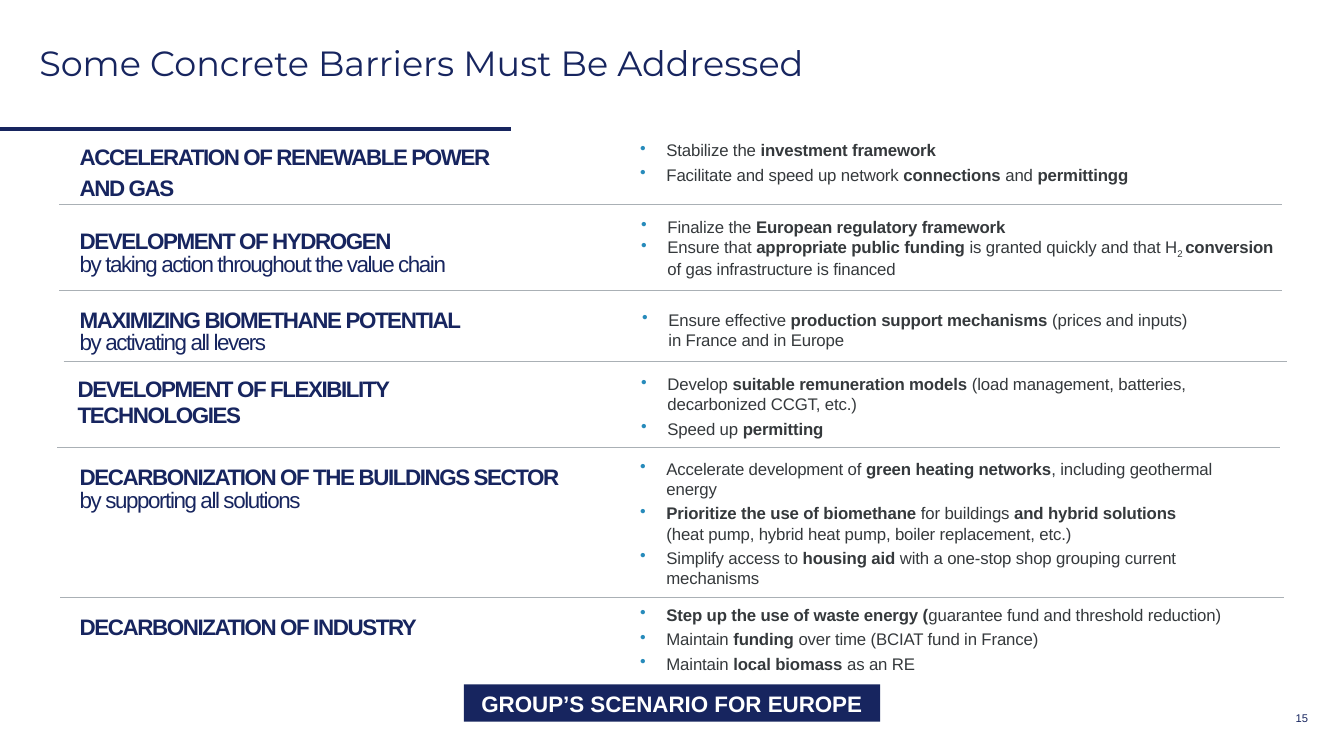
from lxml.etree import SubElement
from pptx import Presentation
from pptx.dml.color import RGBColor
from pptx.enum.shapes import MSO_CONNECTOR, MSO_SHAPE
from pptx.enum.text import MSO_ANCHOR, PP_ALIGN
from pptx.oxml.ns import qn
from pptx.util import Inches, Pt

NAVY, GREY, RULE, BLUE, WHITE = "17255F", "35393C", "AAB0B5", "278BBB", "FFFFFF"

TOPICS = [
    (0.78, 1.39, [("*ACCELERATION OF RENEWABLE POWER*", 21.6), ("*AND GAS*", 21.6)],
     6.24, 1.39, 3,
     ["Stabilize the *investment framework*",
      "Facilitate and speed up network *connections* and *permittingg*"]),
    (0.78, 2.21, [("*DEVELOPMENT OF HYDROGEN*", 22.3),
                  ("by taking action throughout the value chain", 16.3)],
     6.25, 2.15, 0,
     ["Finalize the *European regulatory framework*",
      "Ensure that *appropriate public funding* is granted quickly and that H_2 _*conversion*"
      "|of gas infrastructure is financed"]),
    (0.78, 2.99, [("*MAXIMIZING BIOMETHANE POTENTIAL*", 22.3),
                  ("by activating all levers", 16.3)],
     6.26, 3.07, 3,
     ["Ensure effective *production support mechanisms* (prices and inputs)"
      "|in France and in Europe"]),
    (0.76, 3.72, [("*DEVELOPMENT OF FLEXIBILITY*", 19), ("*TECHNOLOGIES*", 19)],
     6.25, 3.71, 3,
     ["Develop *suitable remuneration models* (load management, batteries,"
      "|decarbonized CCGT, etc.)",
      "Speed up *permitting*"]),
    (0.78, 4.55, [("*DECARBONIZATION OF THE BUILDINGS SECTOR*", 22.3),
                  ("by supporting all solutions", 16.3)],
     6.24, 4.55, 3,
     ["Accelerate development of *green heating networks*, including geothermal|energy",
      "*Prioritize the use of biomethane* for buildings *and hybrid solutions*"
      "|(heat pump, hybrid heat pump, boiler replacement, etc.)",
      "Simplify access to *housing aid* with a one-stop shop grouping current|mechanisms"]),
    (0.78, 6.09, [("*DECARBONIZATION OF INDUSTRY*", 18.4)],
     6.24, 6, 3,
     ["*Step up the use of waste energy (*guarantee fund and threshold reduction)",
      "Maintain *funding* over time (BCIAT fund in France)",
      "Maintain *local biomass* as an RE"]),
]
RULES = [(0.59, 2.03), (0.59, 2.88), (0.63, 3.58), (0.57, 4.44), (0.6, 5.92)]


def color(code):
    return RGBColor.from_string(code)


def style(para, size, code, face="Arial"):
    para.font.size = Pt(size)
    para.font.name = face
    para.font.color.rgb = color(code)


def write(para, text, track):
    for row, line in enumerate(text.split("|")):
        if row:
            para.add_line_break()
        for turn, part in enumerate(line.split("*")):
            for step, bit in enumerate(part.split("_")):
                if not bit:
                    continue
                run = para.add_run()
                run.text = bit
                props = run._r.get_or_add_rPr()
                props.set("spc", str(track))
                if turn % 2:
                    run.font.bold = True
                if step % 2:
                    props.set("baseline", "-20000")


def add_box(slide, left, top, width, height):
    box = slide.shapes.add_textbox(Inches(left), Inches(top), Inches(width), Inches(height))
    frame = box.text_frame
    frame.word_wrap = True
    frame.margin_left = frame.margin_right = frame.margin_top = frame.margin_bottom = 0
    return frame


def add_para(frame, index):
    return frame.add_paragraph() if index else frame.paragraphs[0]


def add_bullet(para):
    props = para._p.get_or_add_pPr()
    props.set("marL", str(Inches(0.37)))
    props.set("indent", str(-Inches(0.26)))
    tint = SubElement(props, qn("a:buClr"))
    SubElement(tint, qn("a:srgbClr")).set("val", BLUE)
    SubElement(props, qn("a:buChar")).set("char", "•")


def add_heading(slide, left, top, lines):
    frame = add_box(slide, left + 0.01, top, 5.3, 0.6)
    for index, (text, pitch) in enumerate(lines):
        para = add_para(frame, index)
        para.line_spacing = Pt(pitch)
        style(para, 16, NAVY)
        write(para, text, -100)


def add_list(slide, left, top, gap, items):
    frame = add_box(slide, left, top, 6.6, 0.25 * len(items))
    for index, text in enumerate(items):
        para = add_para(frame, index)
        if index:
            para.space_before = Pt(gap)
        add_bullet(para)
        style(para, 12, GREY)
        write(para, text, -10)


def add_line(slide, left, top, width, code, weight):
    line = slide.shapes.add_connector(MSO_CONNECTOR.STRAIGHT, Inches(left), Inches(top),
                                      Inches(left + width), Inches(top))
    line.line.color.rgb = color(code)
    line.line.width = Pt(weight)
    SubElement(line._element.spPr, qn("a:effectLst"))


def add_title(slide, text):
    title = slide.shapes.title
    title.left, title.top = Inches(0.29), Inches(0.39)
    title.width, title.height = Inches(12.4), Inches(0.5)
    frame = title.text_frame
    frame.text = text
    frame.vertical_anchor = MSO_ANCHOR.MIDDLE
    para = frame.paragraphs[0]
    para.alignment = PP_ALIGN.LEFT
    para.line_spacing = 0.95
    style(para, 25, NAVY, "Montserrat")


def add_banner(slide, text):
    shape = slide.shapes.add_shape(MSO_SHAPE.RECTANGLE, Inches(4.6), Inches(6.79),
                                   Inches(4.13), Inches(0.37))
    shape.shadow.inherit = False
    shape.fill.solid()
    shape.fill.fore_color.rgb = color(NAVY)
    shape.line.fill.background()
    shape.text_frame.text = text
    para = shape.text_frame.paragraphs[0]
    para.alignment = PP_ALIGN.CENTER
    style(para, 16, WHITE)
    para.font.bold = True


def add_number(slide, text):
    frame = add_box(slide, 12.85, 7.05, 0.24, 0.14)
    frame.text = text
    frame.vertical_anchor = MSO_ANCHOR.MIDDLE
    style(frame.paragraphs[0], 8, NAVY)


def main():
    deck = Presentation()
    deck.slide_width, deck.slide_height = Inches(13.33), Inches(7.5)
    slide = deck.slides.add_slide(deck.slide_layouts[5])
    add_title(slide, "Some Concrete Barriers Must Be Addressed")
    add_line(slide, 0, 1.28, 5.07, NAVY, 2.5)
    for left, top in RULES:
        add_line(slide, left, top, 12.13, RULE, 0.25)
    for left, top, lines, edge, start, gap, items in TOPICS:
        add_heading(slide, left, top, lines)
        add_list(slide, edge, start, gap, items)
    add_banner(slide, "GROUP’S SCENARIO FOR EUROPE")
    add_number(slide, "15")
    deck.save("out.pptx")


if __name__ == "__main__":
    main()
